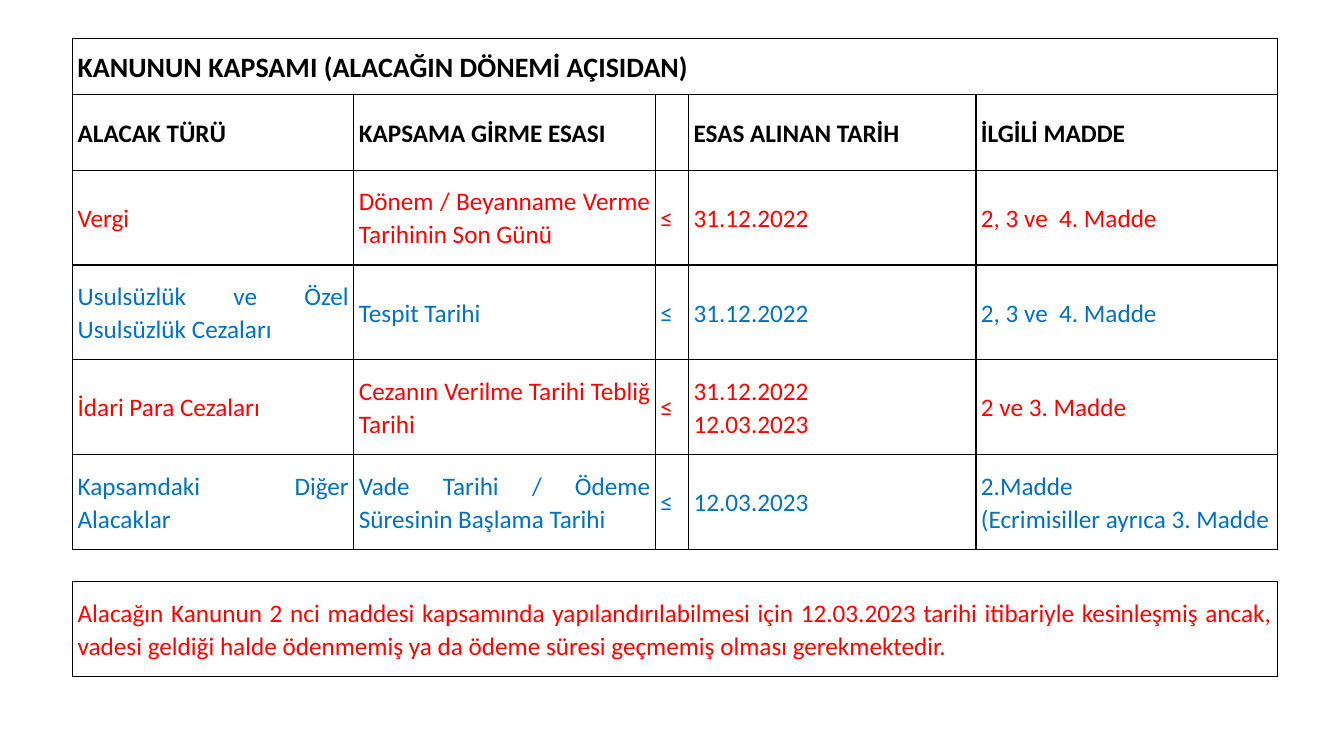
from lxml.etree import SubElement
from pptx import Presentation
from pptx.dml.color import RGBColor
from pptx.enum.text import MSO_ANCHOR, PP_ALIGN
from pptx.oxml.ns import qn
from pptx.util import Inches, Pt

BLACK = RGBColor(0x00, 0x00, 0x00)
RED = RGBColor(0xFF, 0x00, 0x00)
BLUE = RGBColor(0x00, 0x70, 0xC0)

# Content: one entry per table row; "\v" is a line break
HEADING = "KANUNUN KAPSAMI (ALACAĞIN DÖNEMİ AÇISIDAN)"
COLUMN_TITLES = ["ALACAK TÜRÜ", "KAPSAMA GİRME ESASI", "", "ESAS ALINAN TARİH", "İLGİLİ MADDE"]
RECEIVABLES = [
    ["Vergi", "Dönem / Beyanname Verme Tarihinin Son Günü", "≤",
     "31.12.2022", "2, 3 ve  4. Madde"],
    ["Usulsüzlük ve Özel Usulsüzlük Cezaları", "Tespit Tarihi", "≤",
     "31.12.2022", "2, 3 ve  4. Madde"],
    ["İdari Para Cezaları", "Cezanın Verilme Tarihi Tebliğ Tarihi", "≤",
     "31.12.2022\v12.03.2023", "2 ve 3. Madde"],
    ["Kapsamdaki Diğer Alacaklar", "Vade Tarihi / Ödeme Süresinin Başlama Tarihi", "≤",
     "12.03.2023", "2.Madde\v(Ecrimisiller ayrıca 3. Madde"],
]
CONDITION = (
    "Alacağın Kanunun 2 nci maddesi kapsamında yapılandırılabilmesi için 12.03.2023 "
    "tarihi itibariyle kesinleşmiş ancak, vadesi geldiği halde ödenmemiş ya da ödeme "
    "süresi geçmemiş olması gerekmektedir."
)

# Layout
LEFT, TOP = 0.72, 0.38
COLUMN_WIDTHS = [2.79, 2.99, 0.33, 2.85, 2.99]
BODY_HEIGHT = 0.94
ROW_HEIGHTS = [0.56, 0.75] + [BODY_HEIGHT] * len(RECEIVABLES) + [0.32, BODY_HEIGHT]
SPACER_ROW = len(ROW_HEIGHTS) - 2
CONDITION_ROW = len(ROW_HEIGHTS) - 1


def set_borders(cell, sides):
    properties = cell._tc.get_or_add_tcPr()
    for side in ("L", "R", "T", "B"):
        line = SubElement(properties, qn(f"a:ln{side}"), w=str(Pt(1)))
        if side in sides:
            solid = SubElement(line, qn("a:solidFill"))
            SubElement(solid, qn("a:srgbClr"), val=str(BLACK))
        else:
            SubElement(line, qn("a:noFill"))


def write(cell, text, color, size=18, bold=False):
    cell.text = text
    paragraph = cell.text_frame.paragraphs[0]
    paragraph.alignment = PP_ALIGN.JUSTIFY
    paragraph.line_spacing = 1.07
    paragraph.space_after = Pt(8)
    font = paragraph.font
    font.name = "Calibri"
    font.size = Pt(size)
    font.bold = bold
    font.color.rgb = color


def main():
    prs = Presentation()
    prs.slide_width, prs.slide_height = Inches(13.33), Inches(7.5)
    slide = prs.slides.add_slide(prs.slide_layouts[6])

    # Table grid
    scope = slide.shapes.add_table(
        len(ROW_HEIGHTS), len(COLUMN_WIDTHS), Inches(LEFT), Inches(TOP),
        Inches(sum(COLUMN_WIDTHS)), Inches(sum(ROW_HEIGHTS))).table
    scope.first_row = scope.horz_banding = False
    for column, width in zip(scope.columns, COLUMN_WIDTHS):
        column.width = Inches(width)
    for index, (row, height) in enumerate(zip(scope.rows, ROW_HEIGHTS)):
        row.height = Inches(height)
        for cell in row.cells:
            cell.margin_left = cell.margin_right = Inches(0.05)
            cell.margin_top = cell.margin_bottom = 0
            cell.vertical_anchor = MSO_ANCHOR.MIDDLE
            set_borders(cell, "TB" if index == SPACER_ROW else "LRTB")
            cell.fill.background()

    # Full-width rows
    for index in (0, CONDITION_ROW):
        scope.cell(index, 0).merge(scope.cell(index, len(COLUMN_WIDTHS) - 1))
    write(scope.cell(0, 0), HEADING, BLACK, size=20, bold=True)
    write(scope.cell(CONDITION_ROW, 0), CONDITION, RED)

    # Column titles and receivables in alternating colours
    for column, title in enumerate(COLUMN_TITLES):
        if title:
            write(scope.cell(1, column), title, BLACK, bold=True)
    for index, receivable in enumerate(RECEIVABLES):
        for column, text in enumerate(receivable):
            write(scope.cell(index + 2, column), text, (RED, BLUE)[index % 2])

    prs.save("out.pptx")


if __name__ == "__main__":
    main()
